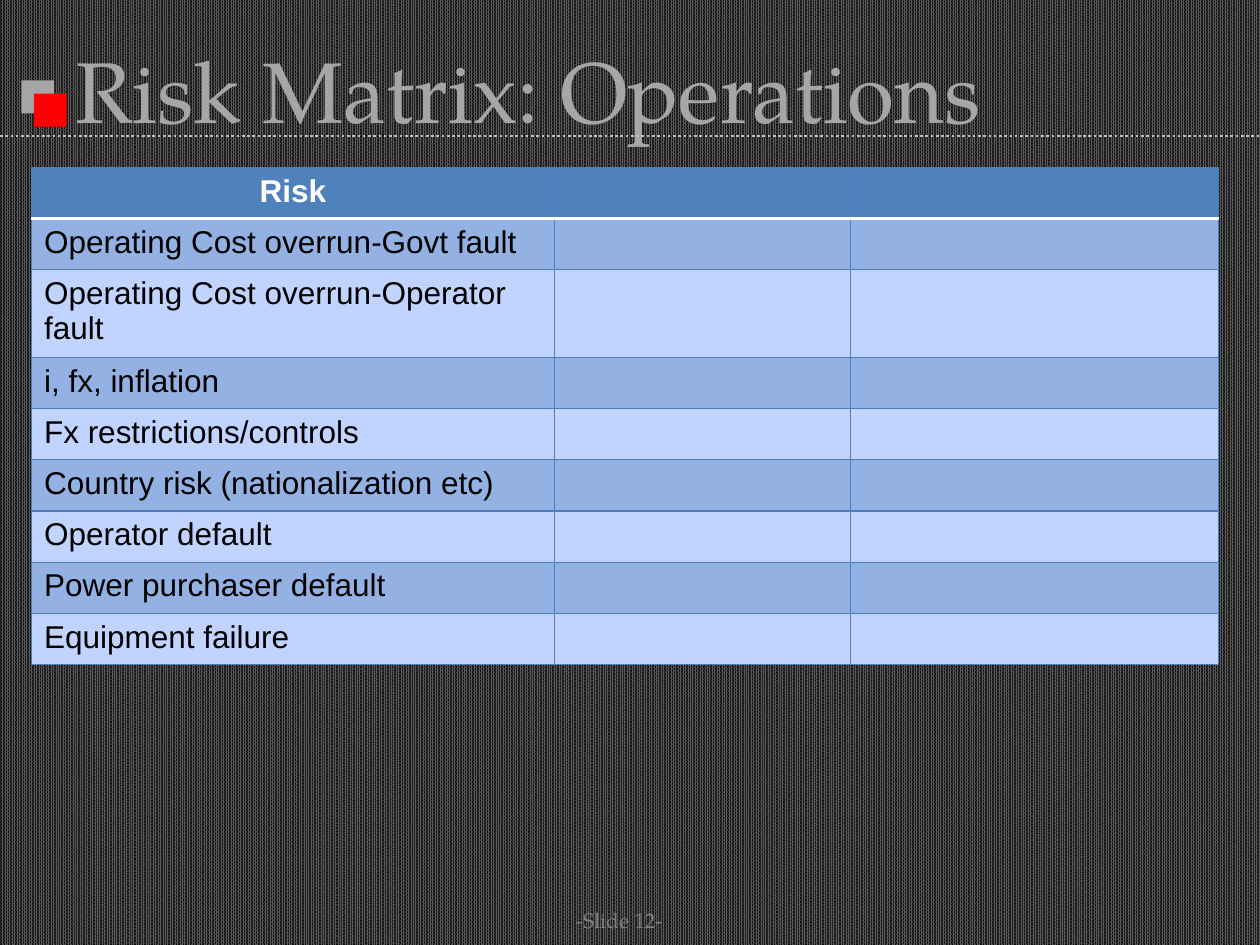
from lxml import etree
from pptx import Presentation
from pptx.dml.color import RGBColor
from pptx.enum.dml import MSO_LINE, MSO_PATTERN
from pptx.enum.shapes import MSO_CONNECTOR, MSO_SHAPE
from pptx.enum.text import MSO_ANCHOR, PP_ALIGN
from pptx.oxml import parse_xml
from pptx.oxml.ns import nsdecls, qn
from pptx.util import Inches, Pt

DOTTED = MSO_LINE.ROUND_DOT
PATTERN = MSO_PATTERN.PERCENT_90
STRAIGHT = MSO_CONNECTOR.STRAIGHT
RECTANGLE = MSO_SHAPE.RECTANGLE
BOTTOM, MIDDLE = MSO_ANCHOR.BOTTOM, MSO_ANCHOR.MIDDLE
LEFT, CENTER = PP_ALIGN.LEFT, PP_ALIGN.CENTER
TITLE_ONLY = 5

COLORS = {
    "pattern_light": "595959", "pattern_dark": "0D0D0D",
    "gray": "A6A6A6", "red": "FF0000", "rule": "BFBFBF", "number": "808080",
    "header": "4F81BD", "border": "4B7EBC", "band": "93B1E3", "plain": "C0D4FF",
    "white": "FFFFFF", "black": "000000",
}
FORMATS = {
    "title": {"name": "TeX Gyre Pagella", "size": Pt(49), "bold": False, "color": "gray"},
    "number": {"name": "TeX Gyre Pagella", "size": Pt(12), "bold": False, "color": "number"},
    "header": {"name": "Arial", "size": Pt(18), "bold": True, "color": "white"},
    "body": {"name": "Arial", "size": Pt(18), "bold": False, "color": "black"},
}
RISKS = [
    "Operating Cost overrun-Govt fault",
    "Operating Cost overrun-Operator fault",
    "i, fx, inflation",
    "Fx restrictions/controls",
    "Country risk (nationalization etc)",
    "Operator default",
    "Power purchaser default",
    "Equipment failure",
]
COLUMN_SHARES = [0.415, 0.235, 0.292]


def rgb(name):
    return RGBColor.from_string(COLORS[name])


class SlideBuilder:
    def __init__(self, presentation):
        self.width = presentation.slide_width
        self.height = presentation.slide_height
        self.slide = presentation.slides.add_slide(presentation.slide_layouts[TITLE_ONLY])

    def box(self, left, top, width, height):
        return (int(left * self.width), int(top * self.height),
                int(width * self.width), int(height * self.height))

    def background(self):
        fill = self.slide.background.fill
        fill.patterned()
        fill.pattern = PATTERN
        fill.fore_color.rgb = rgb("pattern_light")
        fill.back_color.rgb = rgb("pattern_dark")

    def set_text(self, text_frame, text, style, alignment):
        paragraph = text_frame.paragraphs[0]
        paragraph.text = text
        paragraph.alignment = alignment
        for attribute, value in FORMATS[style].items():
            if attribute == "color":
                paragraph.font.color.rgb = rgb(value)
            else:
                setattr(paragraph.font, attribute, value)

    def square(self, left, top, color):
        shape = self.slide.shapes.add_shape(RECTANGLE, *self.box(left, top, 0.026, 0.035))
        shape.shadow.inherit = False
        shape.fill.solid()
        shape.fill.fore_color.rgb = rgb(color)
        shape.line.fill.background()

    def rule(self, top):
        left, y, right, _ = self.box(0, top, 1, 0)
        connector = self.slide.shapes.add_connector(STRAIGHT, left, y, right, y)
        connector.line.color.rgb = rgb("rule")
        connector.line.width = Pt(1.5)
        connector.line.dash_style = DOTTED
        etree.SubElement(connector._element.spPr, qn("a:effectLst"))

    def title(self, text, *area):
        shape = self.slide.shapes.title
        shape.left, shape.top, shape.width, shape.height = self.box(*area)
        shape.text_frame.vertical_anchor = BOTTOM
        self.set_text(shape.text_frame, text, "title", LEFT)

    def label(self, text, *area):
        text_frame = self.slide.shapes.add_textbox(*self.box(*area)).text_frame
        text_frame.word_wrap = True
        text_frame.vertical_anchor = MIDDLE
        self.set_text(text_frame, text, "number", CENTER)

    def border(self, cell, side, color, points):
        cell._tc.get_or_add_tcPr().append(parse_xml(
            f'<a:ln{side} {nsdecls("a")} w="{Pt(points)}"><a:solidFill>'
            f'<a:srgbClr val="{COLORS[color]}"/></a:solidFill></a:ln{side}>'))

    def cell(self, cell, row, text):
        header = row == 0
        for side in "LRTB":
            divider = (row, side) in ((0, "B"), (1, "T"))
            self.border(cell, side, *(("white", 2) if divider else ("border", 0.75)))
        cell.fill.solid()
        cell.fill.fore_color.rgb = rgb("header" if header else "band" if row % 2 else "plain")
        style = "header" if header else "body"
        self.set_text(cell.text_frame, text, style, CENTER if header else LEFT)

    def table(self, labels, left, top, height):
        area = self.box(left, top, sum(COLUMN_SHARES), height)
        table = self.slide.shapes.add_table(len(labels), len(COLUMN_SHARES), *area).table
        for column, share in zip(table.columns, COLUMN_SHARES):
            column.width = int(share * self.width)
        for row, label in enumerate(labels):
            for column in range(len(COLUMN_SHARES)):
                self.cell(table.cell(row, column), row, "" if column else label)


def main():
    presentation = Presentation()
    presentation.slide_width, presentation.slide_height = Inches(10), Inches(7.5)
    builder = SlideBuilder(presentation)
    builder.background()
    builder.square(0.017, 0.085, "gray")
    builder.square(0.027, 0.099, "red")
    builder.rule(0.144)
    builder.title("Risk Matrix: Operations", 0.05, 0.04, 0.9, 0.116)
    builder.label("-Slide 12-", 0.375, 0.947, 0.233, 0.053)
    builder.table(["Risk"] + RISKS, 0.025, 0.177, 0.487)
    presentation.save("out.pptx")


if __name__ == "__main__":
    main()
